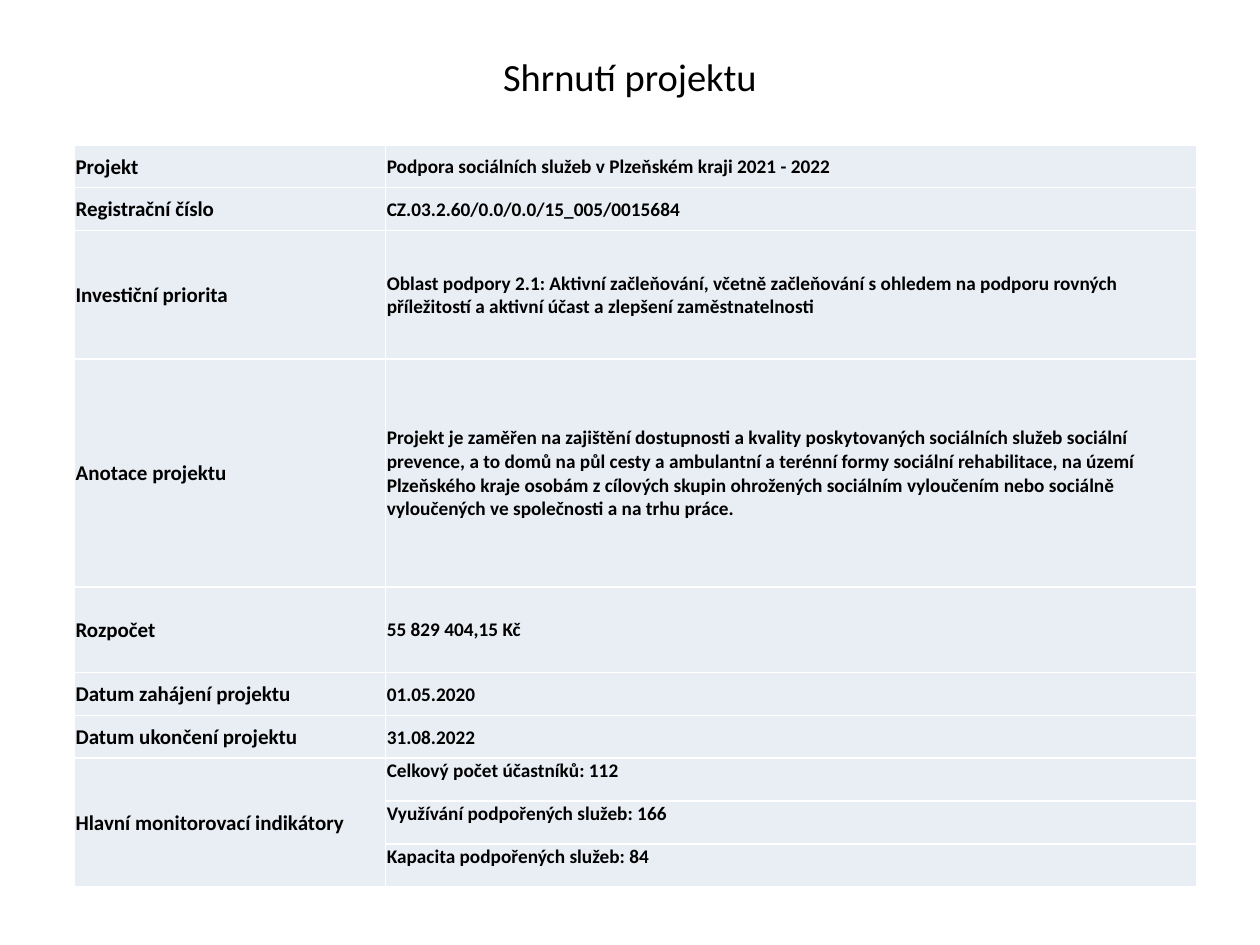
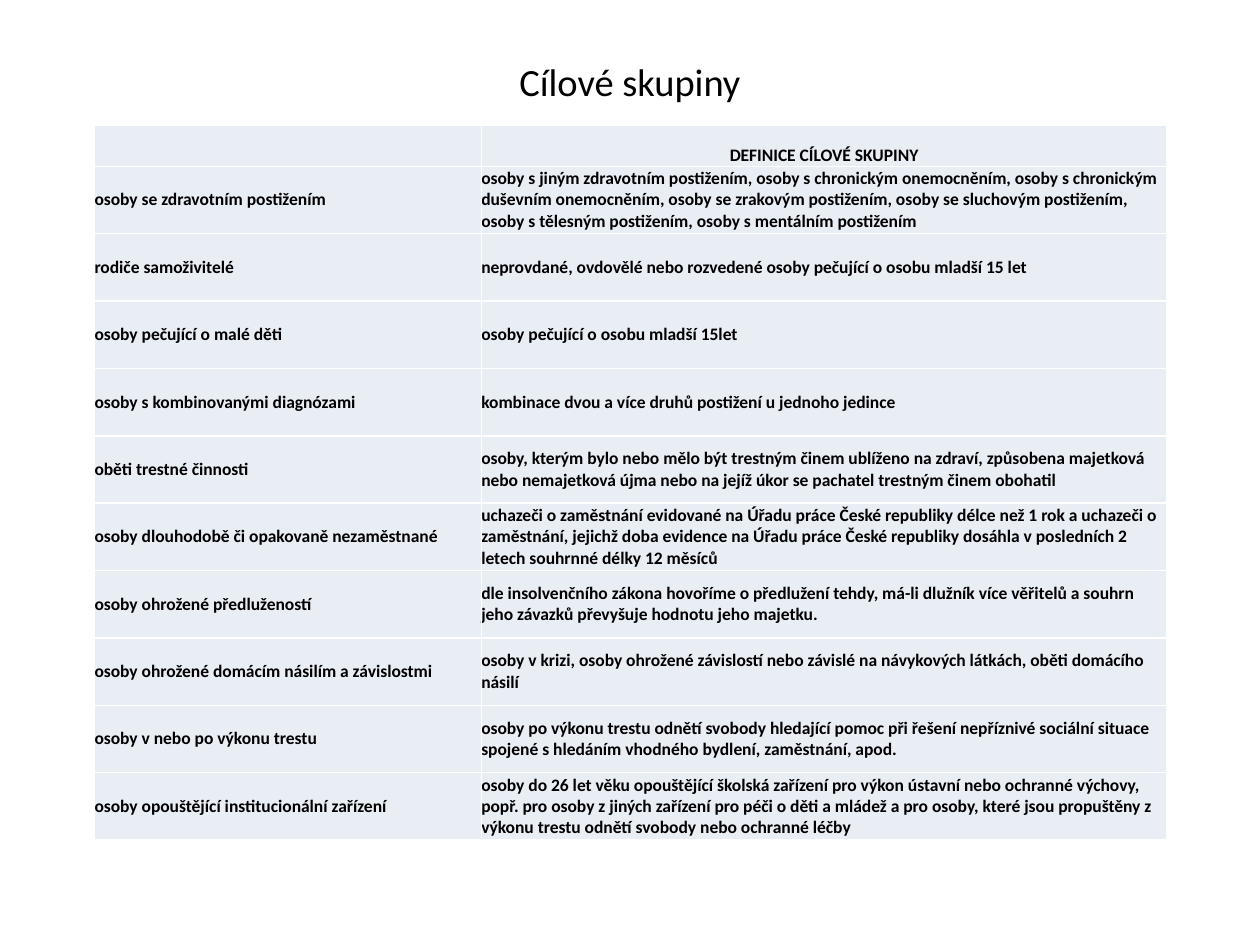
from pptx import Presentation
from pptx.dml.color import RGBColor
from pptx.enum.text import MSO_ANCHOR as Anchor, PP_ALIGN as Align
from pptx.util import Inches, Pt

BLACK = RGBColor(0x00, 0x00, 0x00)
PALE_BLUE = RGBColor(0xE9, 0xED, 0xF4)
FONT = "Calibri"
TITLE_ONLY = 5

PROJECT = [
    ("Projekt", "Podpora sociálních služeb v Plzeňském kraji 2021 - 2022"),
    ("Registrační číslo", "CZ.03.2.60/0.0/0.0/15_005/0015684"),
    ("Investiční priorita",
     "Oblast podpory 2.1: Aktivní začleňování, včetně začleňování s ohledem na podporu "
     "rovných příležitostí a aktivní účast a zlepšení zaměstnatelnosti"),
    ("Anotace projektu",
     "Projekt je zaměřen na zajištění dostupnosti a kvality poskytovaných sociálních služeb "
     "sociální prevence, a to domů na půl cesty a ambulantní a terénní formy sociální "
     "rehabilitace, na území Plzeňského kraje osobám z cílových skupin ohrožených sociálním "
     "vyloučením nebo sociálně vyloučených ve společnosti a na trhu práce."),
    ("Rozpočet", "55 829 404,15 Kč"),
    ("Datum zahájení projektu", "01.05.2020"),
    ("Datum ukončení projektu", "31.08.2022"),
    ("Hlavní monitorovací indikátory", "Celkový počet účastníků: 112"),
    ("", "Využívání podpořených služeb: 166"),
    ("", "Kapacita podpořených služeb: 84"),
]
FIRST_INDICATOR, LAST_INDICATOR = 7, 9

TARGET_GROUPS = [
    ("", "DEFINICE CÍLOVÉ SKUPINY"),
    ("osoby se zdravotním postižením",
     "osoby s jiným zdravotním postižením, osoby s chronickým onemocněním, osoby s chronickým "
     "duševním onemocněním, osoby se zrakovým postižením, osoby se sluchovým postižením, "
     "osoby s tělesným postižením, osoby s mentálním postižením"),
    ("rodiče samoživitelé",
     "neprovdané, ovdovělé nebo rozvedené osoby pečující o osobu mladší 15 let"),
    ("osoby pečující o malé děti", "osoby pečující o osobu mladší 15let"),
    ("osoby s kombinovanými diagnózami",
     "kombinace dvou a více druhů postižení u jednoho jedince"),
    ("oběti trestné činnosti",
     "osoby, kterým bylo nebo mělo být trestným činem ublíženo na zdraví, způsobena majetková "
     "nebo nemajetková újma nebo na jejíž úkor se pachatel trestným činem obohatil"),
    ("osoby dlouhodobě či opakovaně nezaměstnané",
     "uchazeči o zaměstnání evidované na Úřadu práce České republiky délce než 1 rok a uchazeči "
     "o zaměstnání, jejichž doba evidence na Úřadu práce České republiky dosáhla v posledních 2 "
     "letech souhrnné délky 12 měsíců"),
    ("osoby ohrožené předlužeností",
     "dle insolvenčního zákona hovoříme o předlužení tehdy, má-li dlužník více věřitelů a souhrn "
     "jeho závazků převyšuje hodnotu jeho majetku."),
    ("osoby ohrožené domácím násilím a závislostmi",
     "osoby v krizi, osoby ohrožené závislostí nebo závislé na návykových látkách, oběti domácího "
     "násilí"),
    ("osoby v nebo po výkonu trestu",
     "osoby po výkonu trestu odnětí svobody hledající pomoc při řešení nepříznivé sociální situace "
     "spojené s hledáním vhodného bydlení, zaměstnání, apod."),
    ("osoby opouštějící institucionální zařízení",
     "osoby do 26 let věku opouštějící školská zařízení pro výkon ústavní nebo ochranné výchovy, "
     "popř. pro osoby z jiných zařízení pro péči o děti a mládež a pro osoby, které jsou propuštěny "
     "z výkonu trestu odnětí svobody nebo ochranné léčby"),
]


class Deck:
    """Holds the shared style and the slide being built."""

    def __init__(self):
        self.presentation = Presentation()
        self.presentation.slide_width = Inches(10)
        self.presentation.slide_height = Inches(7.5)
        self.slide = None

    def format_runs(self, paragraph, size, bold):
        for run in paragraph.runs:
            run.font.name = FONT
            run.font.size = Pt(size)
            run.font.bold = bold
            run.font.color.rgb = BLACK

    def add_titled_slide(self, text, height):
        layout = self.presentation.slide_layouts[TITLE_ONLY]
        self.slide = self.presentation.slides.add_slide(layout)
        title = self.slide.shapes.title
        title.left, title.top = Inches(0.5), Inches(0.3)
        title.width, title.height = Inches(9), Inches(height)
        title.text_frame.text = text
        title.text_frame.vertical_anchor = Anchor.MIDDLE
        heading = title.text_frame.paragraphs[0]
        heading.alignment = Align.CENTER
        self.format_runs(heading, 22, False)

    def add_table(self, rows, left, top, widths, heights, sizes, inset):
        frame = self.slide.shapes.add_table(
            len(rows), len(widths), Inches(left), Inches(top),
            Inches(sum(widths)), Inches(sum(heights)))
        table = frame.table
        table.first_row = table.horz_banding = False
        for column, width in zip(table.columns, widths):
            column.width = Inches(width)
        for row, height, texts in zip(table.rows, heights, rows):
            row.height = Inches(height)
            for cell, text, size in zip(row.cells, texts, sizes):
                self.fill_cell(cell, text, size, inset)
        return table

    def fill_cell(self, cell, text, size, inset):
        cell.fill.solid()
        cell.fill.fore_color.rgb = PALE_BLUE
        cell.margin_left = cell.margin_right = cell.margin_top = Inches(inset)
        cell.margin_bottom = 0
        cell.vertical_anchor = Anchor.MIDDLE
        cell.text_frame.text = text
        self.format_runs(cell.text_frame.paragraphs[0], size, True)


def main():
    deck = Deck()

    deck.add_titled_slide("Shrnutí projektu", 0.61)
    line = 0.34
    line_counts = [1, 1, 3, 5.32, 2, 1, 1, 1, 1, 1]
    summary = deck.add_table(PROJECT, 0.59, 1.15, [2.47, 6.44],
                             [line * count for count in line_counts], [12, 11], 0.01)
    summary.cell(FIRST_INDICATOR, 0).merge(summary.cell(LAST_INDICATOR, 0))
    for indicator in range(FIRST_INDICATOR, LAST_INDICATOR + 1):
        summary.cell(indicator, 1).vertical_anchor = Anchor.TOP

    deck.add_titled_slide("Cílové skupiny", 0.69)
    group_heights = [0.33] + [0.535] * (len(TARGET_GROUPS) - 1)
    groups = deck.add_table(TARGET_GROUPS, 0.75, 0.99, [3.07, 5.44],
                            group_heights, [10, 10], 0)
    definition_header = groups.cell(0, 1)
    definition_header.vertical_anchor = Anchor.BOTTOM
    definition_header.text_frame.paragraphs[0].alignment = Align.CENTER

    deck.presentation.save("out.pptx")


if __name__ == "__main__":
    main()
